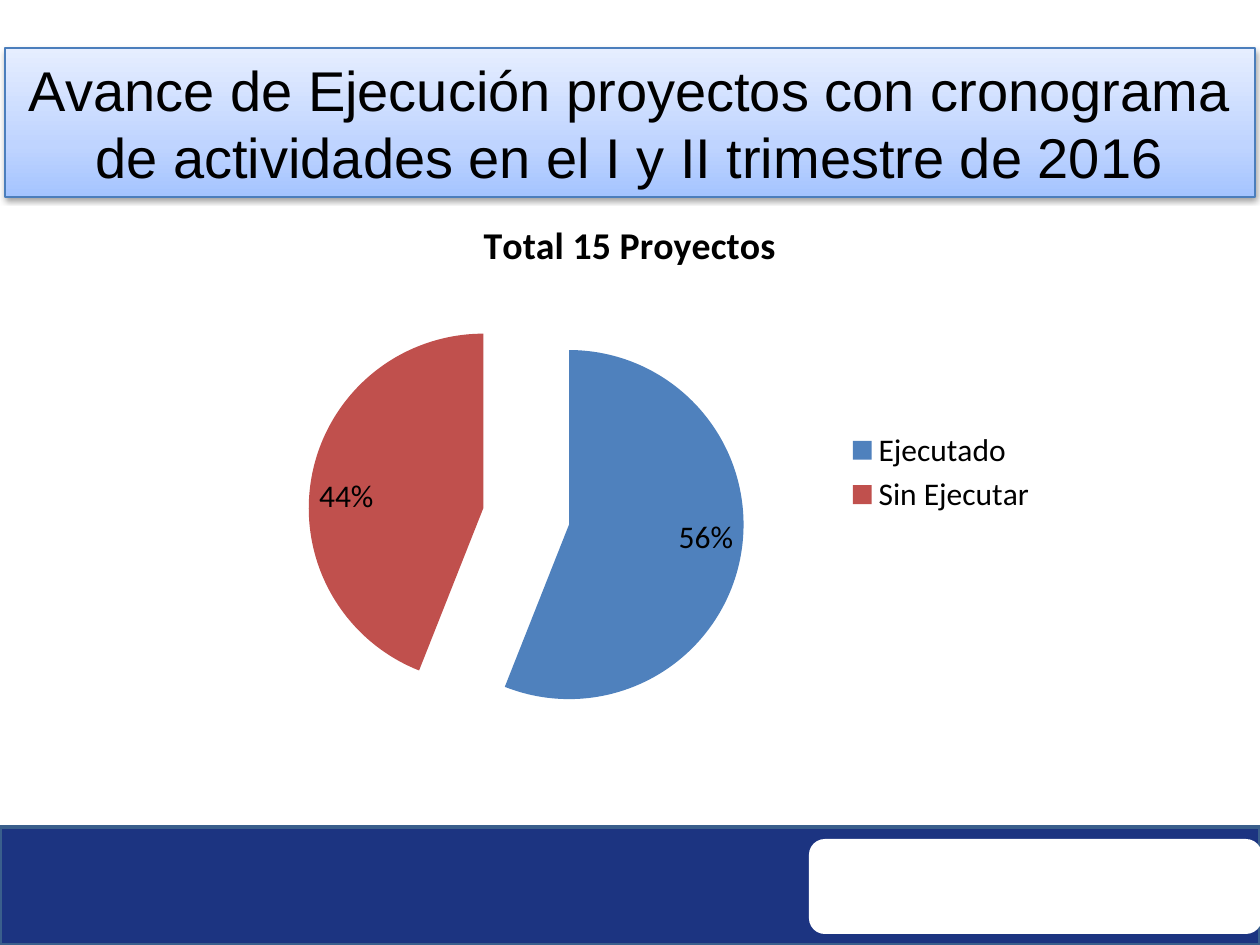
from dataclasses import dataclass

import lxml.etree
import pptx
import pptx.chart.data
import pptx.dml.color
import pptx.enum.chart
import pptx.enum.shapes
import pptx.enum.text
import pptx.oxml
import pptx.oxml.ns
import pptx.util

EMU_PER_PX = 914400 / 126


@dataclass(frozen=True)
class Theme:
    white: str = "FFFFFF"
    text: str = "000000"
    footer: str = "1C3481"
    footer_line: str = "3A5F8C"
    banner_line: str = "4B7EBC"
    banner_stops: tuple = ((0, "A4C4FF"), (35, "BFD4FF"), (100, "E6EEFF"))
    slices: tuple = ("4F81BD", "C0504D")
    banner_font: str = "Arial"
    chart_font: str = "Calibri"
    banner_size: float = 32
    chart_title_size: float = 21.6
    chart_size: float = 18


THEME = Theme()


def px(*values):
    return [pptx.util.Emu(round(v * EMU_PER_PX)) for v in values]


def rgb(value):
    return pptx.dml.color.RGBColor.from_string(value)


def style_font(font, name, size, bold=False):
    font.name = name
    font.size = pptx.util.Pt(size)
    font.bold = bold
    font.color.rgb = rgb(THEME.text)


def add_box(s, kind, box, fill, line=None, width=0):
    sp = s.shapes.add_shape(kind, *px(*box))
    sp.shadow.inherit = False
    sp.fill.solid()
    sp.fill.fore_color.rgb = rgb(fill)
    if line:
        sp.line.color.rgb = rgb(line)
        sp.line.width = pptx.util.Pt(width)
    else:
        sp.line.fill.background()
    return sp


def set_gradient(sp, stops, angle):
    ns = pptx.oxml.ns.nsdecls("a")
    gs = "".join(
        f'<a:gs pos="{pos * 1000}"><a:srgbClr val="{color}"/></a:gs>'
        for pos, color in stops
    )
    gradient = pptx.oxml.parse_xml(
        f'<a:gradFill {ns} rotWithShape="1"><a:gsLst>{gs}</a:gsLst>'
        f'<a:lin ang="{angle * 60000}" scaled="0"/></a:gradFill>'
    )
    props = sp._element.spPr
    props.replace(props.find(pptx.oxml.ns.qn("a:solidFill")), gradient)


def set_shadow(sp, color, alpha, blur, distance, angle):
    effects = sp._element.spPr.find(pptx.oxml.ns.qn("a:effectLst"))
    shadow = lxml.etree.SubElement(
        effects,
        pptx.oxml.ns.qn("a:outerShdw"),
        blurRad=str(pptx.util.Pt(blur)),
        dist=str(pptx.util.Pt(distance)),
        dir=str(angle * 60000),
        rotWithShape="0",
    )
    clr = lxml.etree.SubElement(shadow, pptx.oxml.ns.qn("a:srgbClr"), val=color)
    lxml.etree.SubElement(clr, pptx.oxml.ns.qn("a:alpha"), val=str(alpha * 1000))


def add_banner(s, box, text):
    sp = add_box(s, pptx.enum.shapes.MSO_SHAPE.RECTANGLE, box,
                 THEME.white, THEME.banner_line, 0.75)
    set_gradient(sp, THEME.banner_stops, 270)
    set_shadow(sp, THEME.text, 38, 3.1, 1.6, 90)
    tf = sp.text_frame
    tf.word_wrap = True
    tf.vertical_anchor = pptx.enum.text.MSO_ANCHOR.MIDDLE
    tf.text = text
    p = tf.paragraphs[0]
    p.alignment = pptx.enum.text.PP_ALIGN.CENTER
    style_font(p.runs[0].font, THEME.banner_font, THEME.banner_size)


def add_pie(s, box, title, values):
    data = pptx.chart.data.CategoryChartData(number_format="0%")
    data.categories = list(values)
    data.add_series(title, list(values.values()))
    chart = s.shapes.add_chart(
        pptx.enum.chart.XL_CHART_TYPE.PIE_EXPLODED, *px(*box), data
    ).chart
    style_font(chart.font, THEME.chart_font, THEME.chart_size)

    chart.has_title = True
    tf = chart.chart_title.text_frame
    tf.text = title
    style_font(tf.paragraphs[0].runs[0].font, THEME.chart_font,
               THEME.chart_title_size, True)

    chart.has_legend = True
    chart.legend.position = pptx.enum.chart.XL_LEGEND_POSITION.RIGHT
    chart.legend.include_in_layout = False

    plot = chart.plots[0]
    plot.vary_by_categories = True
    series = plot.series[0]
    for i, color in enumerate(THEME.slices):
        fill = series.points[i].format.fill
        fill.solid()
        fill.fore_color.rgb = rgb(color)
    labels = series.data_labels
    labels.show_value = True
    labels.show_percentage = False
    labels.number_format = "0%"
    labels.number_format_is_linked = False
    labels.position = pptx.enum.chart.XL_LABEL_POSITION.INSIDE_END
    style_font(labels.font, THEME.chart_font, THEME.chart_size)


def main():
    prs = pptx.Presentation()
    prs.slide_width, prs.slide_height = px(1260, 945)
    s = prs.slides.add_slide(prs.slide_layouts[6])
    shapes = pptx.enum.shapes.MSO_SHAPE
    add_box(s, shapes.RECTANGLE, (0, 827, 1260, 118),
            THEME.footer, THEME.footer_line, 2)
    add_box(s, shapes.ROUNDED_RECTANGLE, (809, 839, 453, 95), THEME.white)
    add_banner(s, (5, 48, 1250, 149),
               "Avance de Ejecución proyectos con cronograma de actividades "
               "en el I y II trimestre de 2016")
    add_pie(s, (210, 193, 840, 559), "Total 15 Proyectos",
            {"Ejecutado": 0.56, "Sin Ejecutar": 0.44})
    prs.save("out.pptx")


if __name__ == "__main__":
    main()
